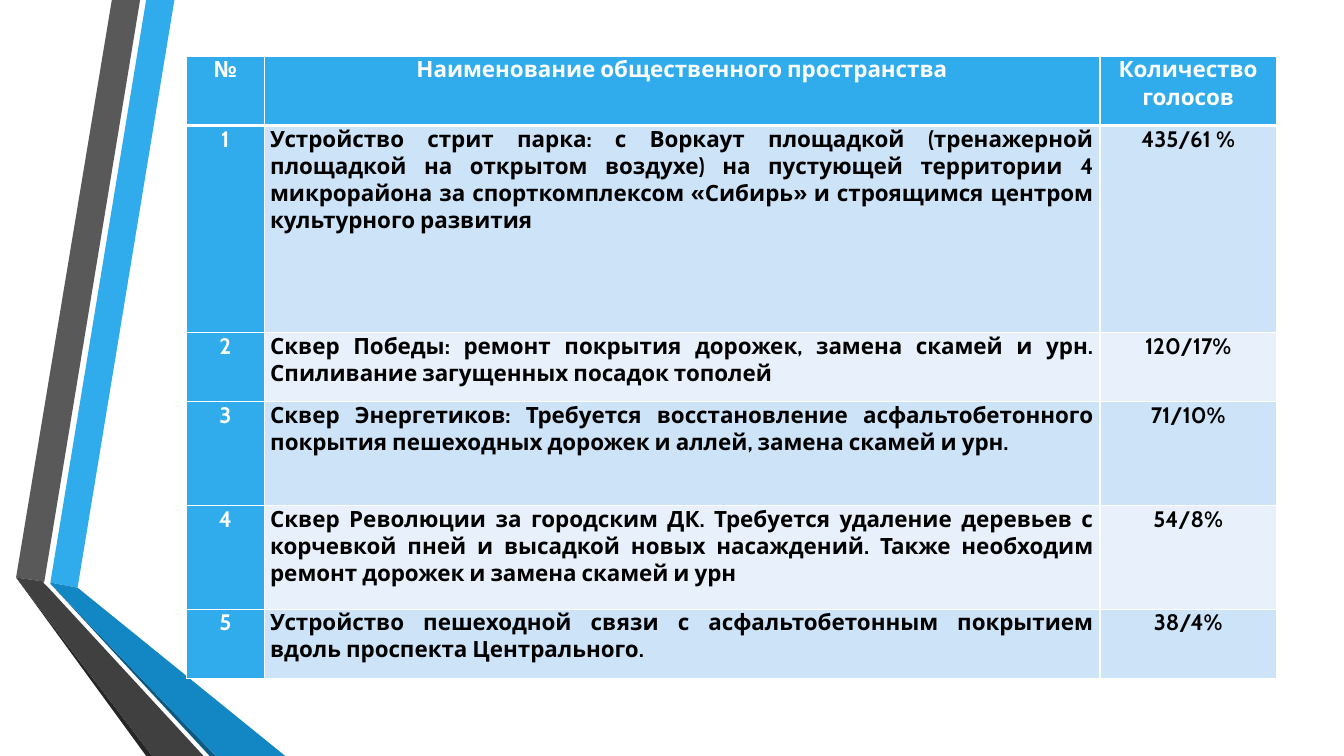
from lxml import etree
from pptx import Presentation
from pptx.dml.color import RGBColor
from pptx.enum.text import PP_ALIGN
from pptx.oxml.ns import qn
from pptx.util import Inches, Pt

CENTER, JUSTIFY = PP_ALIGN.CENTER, PP_ALIGN.JUSTIFY
WHITE, BLACK, BLUE = "FFFFFF", "000000", "30ACEC"
BANDS = ("CDE3F8", "E8F1FB")
FONT = {"name": "Cabin", "size": Pt(16), "bold": True}
MARGINS = {"margin_left": Inches(0.06), "margin_right": Inches(0.06),
           "margin_top": 0, "margin_bottom": 0}
HEADER_BORDERS = {"a:lnL": 1, "a:lnR": 1, "a:lnT": 1, "a:lnB": 3}

RIBBONS = [
    (BLUE, [(0.34, 5.78), (0.61, 5.83), (1.57, 0), (1.29, 0)]),
    ("595959", [(1.23, 0), (0.95, 0), (0, 5.73), (0.28, 5.77)]),
    ("262626", [(0, 5.73), (1.29, 7.5), (1.35, 7.5)]),
    ("0C5A82", [(0.34, 5.79), (1.92, 7.5), (1.98, 7.5)]),
    ("1287C3", [(0.34, 5.79), (1.98, 7.5), (2.67, 7.5), (0.61, 5.83), (0.34, 5.78)]),
    ("404040", [(1.86, 7.5), (0.32, 5.83), (0.27, 5.78), (0.28, 5.77),
                (0, 5.73), (1.35, 7.5)]),
]

COLUMN_WIDTHS = (0.77, 8.29, 1.75)
ROW_UNITS = (1, 3, 1, 1.5, 1.5, 1)
HEADER = ("№", "Наименование общественного пространства", "Количество голосов")
SPACES = [
    ("Устройство стрит парка: с Воркаут площадкой (тренажерной площадкой на открытом "
     "воздухе) на пустующей территории 4 микрорайона за спорткомплексом «Сибирь» и "
     "строящимся центром культурного развития", "435/61 %"),
    ("Сквер Победы: ремонт покрытия дорожек, замена скамей и урн. Спиливание "
     "загущенных посадок тополей", "120/17%"),
    ("Сквер Энергетиков: Требуется восстановление асфальтобетонного покрытия "
     "пешеходных дорожек и аллей, замена скамей и урн.", "71/10%"),
    ("Сквер Революции за городским ДК. Требуется удаление деревьев с корчевкой пней и "
     "высадкой новых насаждений. Также необходим ремонт дорожек и замена скамей и урн",
     "54/8%"),
    ("Устройство пешеходной связи с асфальтобетонным покрытием вдоль проспекта "
     "Центрального.", "38/4%"),
]


def rgb(value):
    """Return the colour for a hex string."""
    return RGBColor.from_string(value)


def set_attrs(target, values):
    """Set each attribute of target from a dict."""
    for name, value in values.items():
        setattr(target, name, value)


def add_ribbons(slide, left, top):
    """Draw the folded ribbons with their corner at left, top."""
    for color, points in RIBBONS:
        corners = [(Inches(left + x), Inches(top + y)) for x, y in points]
        builder = slide.shapes.build_freeform(*corners[0])
        builder.add_line_segments(corners[1:], close=True)
        sp = builder.convert_to_shape()
        sp.shadow.inherit = False
        sp.fill.solid()
        sp.fill.fore_color.rgb = rgb(color)
        sp.line.fill.background()


def add_borders(cell, borders):
    """Give a cell white borders with widths in points."""
    tc_pr = cell._tc.get_or_add_tcPr()
    for tag, width in borders.items():
        ln = etree.SubElement(tc_pr, qn(tag), w=str(Pt(width)))
        fill = etree.SubElement(ln, qn("a:solidFill"))
        etree.SubElement(fill, qn("a:srgbClr"), val=WHITE)


def fill_cell(cell, text, fill, color, align):
    """Write and format one table cell."""
    set_attrs(cell, MARGINS)
    cell.fill.solid()
    cell.fill.fore_color.rgb = rgb(fill)
    p = cell.text_frame.paragraphs[0]
    p.alignment = align
    r = p.add_run()
    r.text = text
    set_attrs(r.font, FONT)
    r.font.color.rgb = rgb(color)


def add_votes_table(slide, left, top, width, height):
    """Add the table of public spaces and votes in the given box."""
    rows = [HEADER] + [(str(n), *space) for n, space in enumerate(SPACES, 1)]
    table = slide.shapes.add_table(len(rows), len(HEADER), Inches(left), Inches(top),
                                   Inches(width), Inches(height)).table
    table.first_col = True
    for column, share in zip(table.columns, COLUMN_WIDTHS):
        column.width = Inches(width * share / sum(COLUMN_WIDTHS))
    for i, (row, units) in enumerate(zip(rows, ROW_UNITS)):
        table.rows[i].height = Inches(height * units / sum(ROW_UNITS))
        for j, text in enumerate(row):
            cell = table.cell(i, j)
            heading = i == 0 or j == 0
            if i == 0:
                add_borders(cell, HEADER_BORDERS)
            fill_cell(cell, text,
                      BLUE if heading else BANDS[(i - 1) % 2],
                      WHITE if heading else BLACK,
                      JUSTIFY if i and j == 1 else CENTER)


def main():
    """Build the slide and save it."""
    prs = Presentation()
    prs.slide_width, prs.slide_height = Inches(13.33), Inches(7.5)
    slide = prs.slides.add_slide(prs.slide_layouts[6])
    add_ribbons(slide, 0.16, 0)
    add_votes_table(slide, 1.85, 0.56, 10.81, 6.17)
    prs.save("out.pptx")


if __name__ == "__main__":
    main()
